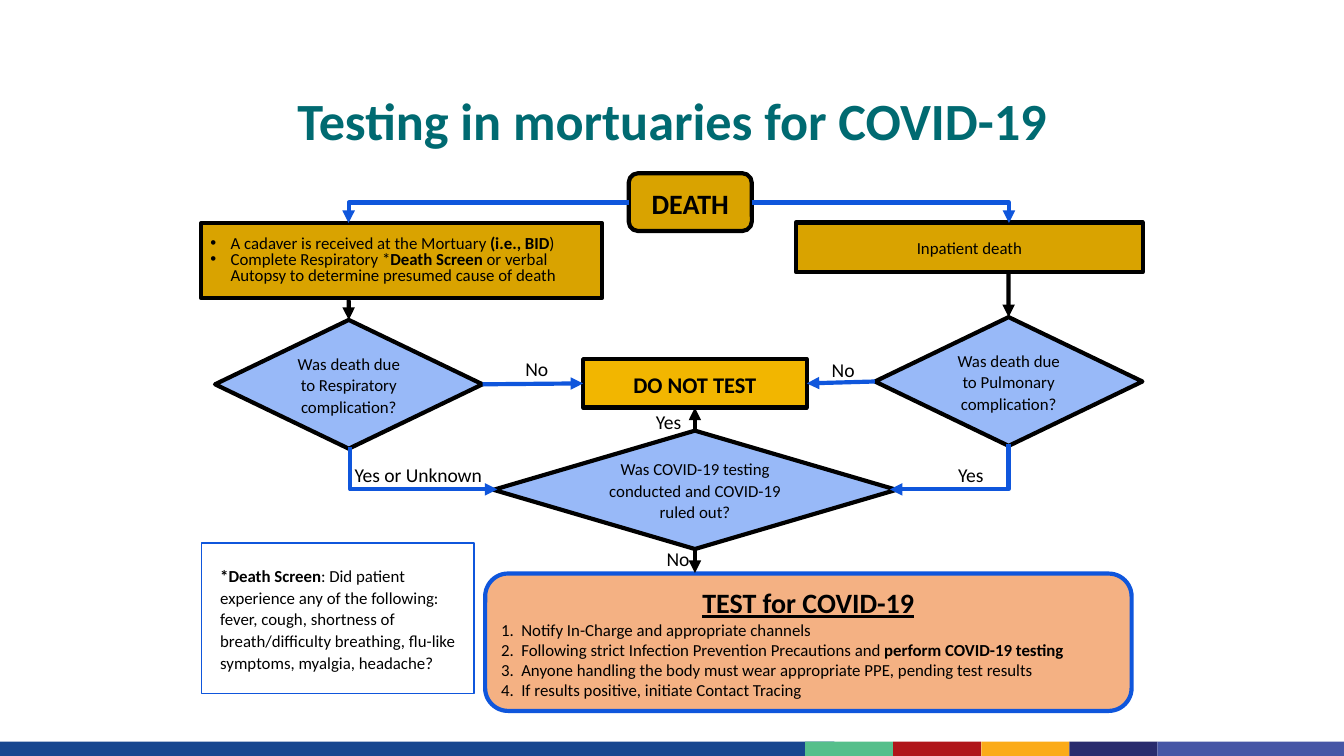
from lxml.etree import SubElement
from pptx import Presentation
from pptx.dml.color import RGBColor
from pptx.enum.shapes import MSO_CONNECTOR, MSO_SHAPE
from pptx.enum.text import MSO_ANCHOR, PP_ALIGN
from pptx.oxml.ns import qn
from pptx.util import Pt

BLACK = RGBColor(0x00, 0x00, 0x00)
TEAL = RGBColor(0x00, 0x6A, 0x71)
OCHRE = RGBColor(0xD9, 0xA3, 0x00)
AMBER = RGBColor(0xF2, 0xB6, 0x00)
SKY = RGBColor(0x98, 0xB9, 0xF8)
BLUE = RGBColor(0x0F, 0x56, 0xDC)
PEACH = RGBColor(0xF4, 0xB1, 0x83)
NAVY = RGBColor(0x17, 0x46, 0x8F)
STRIPES = [RGBColor(0x55, 0xBF, 0x8B), RGBColor(0xB0, 0x15, 0x19), RGBColor(0xFB, 0xAB, 0x18),
           RGBColor(0x29, 0x2B, 0x6E), RGBColor(0x46, 0x56, 0xA6)]


def add_text(shape, text, size=9, color=BLACK, bold=False, underline=False,
             align=PP_ALIGN.LEFT, spacing=1.07, after=0, margin=0, indent=0, bullet=None):
    """Add a paragraph; parts between bars switch to bold."""
    frame = shape.text_frame
    para = frame.paragraphs[0]
    if para.runs:
        para = frame.add_paragraph()
    para.alignment = align
    para.line_spacing = spacing
    para.space_after = Pt(after)
    for index, part in enumerate(text.split("|")):
        if part:
            span = para.add_run()
            span.text = part
            span.font.name = "Calibri"
            span.font.size = Pt(size)
            span.font.color.rgb = color
            span.font.bold = bold or index % 2 == 1
            span.font.underline = underline
    properties = para._p.get_or_add_pPr()
    properties.set("marL", str(Pt(margin)))
    properties.set("indent", str(Pt(indent)))
    if bullet == "number":
        SubElement(properties, qn("a:buFont"), typeface="+mj-lt")
        SubElement(properties, qn("a:buAutoNum"), type="arabicPeriod")
    elif bullet:
        SubElement(properties, qn("a:buFont"), typeface="Arial")
        SubElement(properties, qn("a:buChar"), char=bullet)


def set_frame(shape, anchor, sides=5, ends=3):
    """Set wrapping, anchor and margins of a shape's text."""
    frame = shape.text_frame
    frame.word_wrap = True
    frame.vertical_anchor = anchor
    frame.margin_left = frame.margin_right = Pt(sides)
    frame.margin_top = frame.margin_bottom = Pt(ends)


def add_node(page, kind, box, fill=None, line=None, width=2.25, anchor=MSO_ANCHOR.MIDDLE, ends=3):
    """Draw one preset shape in the box."""
    node = page.shapes.add_shape(kind, *map(Pt, box))
    node.shadow.inherit = False
    if fill is None:
        node.fill.background()
    else:
        node.fill.solid()
        node.fill.fore_color.rgb = fill
    if line is None:
        node.line.fill.background()
    else:
        node.line.color.rgb = line
        node.line.width = Pt(width)
    set_frame(node, anchor, ends=ends)
    return node


def add_step(page, kind, box, text, fill, **style):
    """Draw a black-edged step with centred text."""
    node = add_node(page, kind, box, fill, BLACK)
    add_text(node, text, align=PP_ALIGN.CENTER, **style)
    return node


def add_label(page, box, text):
    """Place the answer beside an arrow."""
    label = page.shapes.add_textbox(*map(Pt, box))
    set_frame(label, MSO_ANCHOR.TOP)
    add_text(label, text, size=10.5, after=6)


def add_arrow(page, start, end, color, bend=None, begin=None, finish=None):
    """Draw an arrow, bent at a share of its width or straight."""
    kind = MSO_CONNECTOR.STRAIGHT if bend is None else MSO_CONNECTOR.ELBOW
    arrow = page.shapes.add_connector(kind, *map(Pt, start + end))
    if begin:
        arrow.begin_connect(*begin)
    if finish:
        arrow.end_connect(*finish)
    arrow.line.color.rgb = color
    arrow.line.width = Pt(2.25)
    SubElement(arrow.line._get_or_add_ln(), qn("a:tailEnd"), type="triangle")
    properties = arrow._element.spPr
    SubElement(properties, qn("a:effectLst"))
    if bend is not None:
        guides = properties.find(qn("a:prstGeom")).get_or_add_avLst()
        SubElement(guides, qn("a:gd"), name="adj1", fmla=f"val {bend * 100000}")


def add_title(page, box):
    """Place the heading."""
    title = page.shapes.add_textbox(*map(Pt, box))
    set_frame(title, MSO_ANCHOR.BOTTOM, 7.2, 3.6)
    add_text(title, "Testing in mortuaries for COVID-19", size=28, color=TEAL, bold=True,
             align=PP_ALIGN.CENTER, spacing=Pt(30))


def add_footer(page, box):
    """Draw the coloured band along the bottom."""
    left, top, width, height = box
    add_node(page, MSO_SHAPE.RECTANGLE, (left, top, 447, height), NAVY)
    first, step = left + 431.3, 47.2
    for index, color in enumerate(STRIPES):
        start = first + index * step
        stripe = width - start if index == len(STRIPES) - 1 else step
        add_node(page, MSO_SHAPE.RECTANGLE, (start, top, stripe, height), color)


def add_cadaver(page, box):
    """Draw the mortuary intake step."""
    node = add_node(page, MSO_SHAPE.RECTANGLE, box, OCHRE, BLACK)
    for text in ("A cadaver is received at the Mortuary |(i.e., BID|)",
                 "Complete Respiratory *|Death Screen| or verbal Autopsy to determine presumed cause of death"):
        add_text(node, text, spacing=0.8, margin=10.8, indent=-10.8, bullet="•")


def add_screen_note(page, box):
    """Draw the note that explains the death screen."""
    note = add_node(page, MSO_SHAPE.RECTANGLE, box, line=BLUE, width=1)
    add_text(note, "|*Death Screen|: Did patient experience any of the following: fever, cough, "
             "shortness of breath/difficulty breathing, flu-like symptoms, myalgia, headache?",
             after=6, margin=5)


def add_test(page, box):
    """Draw the testing instructions."""
    node = add_node(page, MSO_SHAPE.ROUNDED_RECTANGLE, box, PEACH, BLUE,
                    anchor=MSO_ANCHOR.TOP, ends=1.7)
    add_text(node, "TEST for COVID-19", size=15, bold=True, underline=True, align=PP_ALIGN.CENTER)
    for text in ("Notify In-Charge and appropriate channels",
                 "Following strict Infection Prevention Precautions and |perform COVID-19 testing|",
                 "Anyone handling the body must wear appropriate PPE, pending test results",
                 "If results positive, initiate Contact Tracing"):
        add_text(node, text, spacing=1.0, margin=10.8, indent=-10.8, bullet="number")


def add_flow(page):
    """Draw the decision flow with its arrows and answers."""
    rectangle, diamond = MSO_SHAPE.RECTANGLE, MSO_SHAPE.DIAMOND
    add_step(page, MSO_SHAPE.ROUNDED_RECTANGLE, (336.8, 92.8, 66, 31), "DEATH", OCHRE,
             size=15, bold=True)
    add_cadaver(page, (107.8, 119.5, 214.7, 40.3))
    add_step(page, rectangle, (426.4, 119.2, 185.8, 26.5), "Inpatient death", OCHRE)
    stop = add_step(page, rectangle, (312.4, 192.4, 119.8, 26), "DO NOT TEST", AMBER,
                    size=12, bold=True)
    ruled_out = add_step(page, diamond, (264.4, 230.7, 215.8, 63.4),
                         "Was COVID-19 testing conducted and COVID-19 ruled out?", SKY, after=6)
    pulmonary = add_step(page, diamond, (468.7, 169.9, 143.3, 69),
                         "Was death due to Pulmonary complication?", SKY, after=6)
    respiratory = add_step(page, diamond, (115.2, 171.4, 143.3, 69),
                           "Was death due to Respiratory complication?", SKY, after=6)
    add_test(page, (259.9, 307.3, 346.3, 73.6))

    add_arrow(page, (402.8, 108.5), (540.5, 119.5), BLUE, bend=1)
    add_arrow(page, (336.8, 108.5), (186.8, 119.5), BLUE, bend=1)
    add_arrow(page, (540.3, 238), (476.8, 262.2), BLUE, bend=0)
    add_arrow(page, (187.6, 239.5), (266.5, 262.2), BLUE, bend=0)
    add_arrow(page, (186.8, 159.8), (186.8, 171.4), BLACK, finish=(respiratory, 0))
    add_arrow(page, (540.3, 145.7), (540.3, 169.9), BLACK, finish=(pulmonary, 0))
    add_arrow(page, (258.5, 206), (312.4, 206), BLUE, begin=(respiratory, 3), finish=(stop, 1))
    add_arrow(page, (468.7, 205), (432.2, 205), BLUE, begin=(pulmonary, 1), finish=(stop, 3))
    add_arrow(page, (372.3, 230.7), (372.3, 218.4), BLACK, begin=(ruled_out, 0), finish=(stop, 2))
    add_arrow(page, (372.3, 294), (372.3, 307), BLACK, begin=(ruled_out, 2))

    for left, top in ((276.5, 187.2), (440.6, 187.9), (352.1, 289.4)):
        add_label(page, (left, top, 23, 19.4), "No")
    for left, top in ((508.3, 244.1), (346.3, 216)):
        add_label(page, (left, top, 29, 19.4), "Yes")
    add_label(page, (185, 244.1, 90.7, 13), "Yes or Unknown")


def main():
    """Build and save the deck."""
    deck = Presentation()
    deck.slide_width, deck.slide_height = Pt(720), Pt(405)
    page = deck.slides.add_slide(deck.slide_layouts[6])
    add_footer(page, (0, 397.4, 720, 7.6))
    add_title(page, (36, 16.6, 648, 67.7))
    add_screen_note(page, (108, 291, 146.2, 80.6))
    add_flow(page)
    deck.save("out.pptx")


if __name__ == "__main__":
    main()
